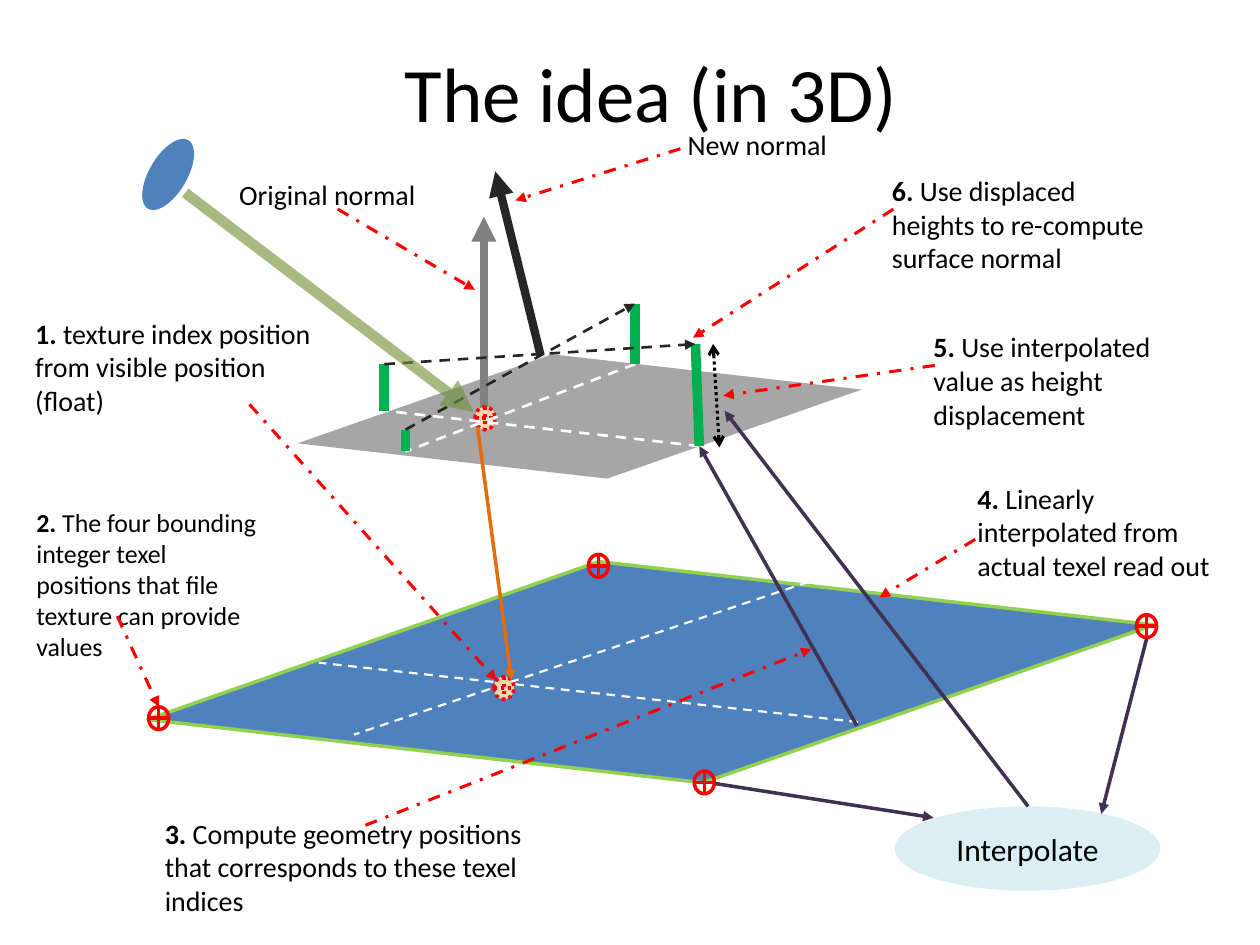
from dataclasses import dataclass

from lxml import etree
from pptx import Presentation
from pptx.dml.color import RGBColor
from pptx.enum.dml import MSO_LINE_DASH_STYLE as DASH
from pptx.enum.shapes import MSO_CONNECTOR, MSO_SHAPE
from pptx.enum.text import MSO_ANCHOR, PP_ALIGN
from pptx.oxml.ns import qn
from pptx.util import Pt


@dataclass(frozen=True)
class Theme:
    font: str = "Calibri"
    title: float = 44
    node: float = 18
    body: float = 16
    small: float = 14.8
    text: str = "000000"
    white: str = "FFFFFF"
    surface: str = "A6A6A6"
    old_normal: str = "808080"
    new_normal: str = "262626"
    texture: str = "4F81BD"
    texture_edge: str = "92D050"
    height: str = "00B050"
    ray: str = "77933C"
    callout: str = "FF0000"
    sample: str = "FCD5B5"
    lookup: str = "E46C0A"
    flow: str = "403152"
    node_fill: str = "DBEEF4"


@dataclass(frozen=True)
class Box:
    left: float
    top: float
    width: float
    height: float

    def inner(self, x, y, width, height):
        return Box(self.left + x, self.top + y, width, height)

    def centred(self, x, y, width, height):
        return self.inner(x - width / 2, y - height / 2, width, height)

    def emu(self):
        return Pt(self.left), Pt(self.top), Pt(self.width), Pt(self.height)


T = Theme()


def add_line(s, box, start, end, color, width, dash=None, head=None, tail=None, alpha=None):
    (x1, y1), (x2, y2) = start, end
    c = s.shapes.add_connector(
        MSO_CONNECTOR.STRAIGHT,
        Pt(box.left + x1), Pt(box.top + y1), Pt(box.left + x2), Pt(box.top + y2),
    )
    c.line.color.rgb = RGBColor.from_string(color)
    c.line.width = Pt(width)
    if dash:
        c.line.dash_style = dash
    ln = c.line._get_or_add_ln()
    if alpha:
        etree.SubElement(ln.find(".//" + qn("a:srgbClr")), qn("a:alpha"), val=str(alpha * 1000))
    for tag, kind in (("a:headEnd", head), ("a:tailEnd", tail)):
        if kind:
            etree.SubElement(ln, qn(tag), type=kind)
    etree.SubElement(c._element.spPr, qn("a:effectLst"))


def add_callout(s, box, start, end):
    add_line(s, box, start, end, T.callout, 1.75, DASH.DASH_DOT, tail="triangle")


def add_shape(s, kind, box, fill=None, line=None, width=2, dash=None, rotation=0):
    sp = s.shapes.add_shape(kind, *box.emu())
    sp.shadow.inherit = False
    sp.rotation = rotation
    if fill:
        sp.fill.solid()
        sp.fill.fore_color.rgb = RGBColor.from_string(fill)
    else:
        sp.fill.background()
    if line:
        sp.line.color.rgb = RGBColor.from_string(line)
        sp.line.width = Pt(width)
        if dash:
            sp.line.dash_style = dash
    else:
        sp.line.fill.background()
    return sp


def add_plane(s, box, fill, line=None):
    sp = add_shape(s, MSO_SHAPE.PARALLELOGRAM, box, fill, line, rotation=6.5)
    sp.adjustments[0] = 2.07


def add_marker(s, box, x, y, fill=None, dash=None):
    add_shape(s, MSO_SHAPE.FLOWCHART_OR, box.centred(x, y, 11.5, 13), fill, T.callout, 2, dash)


def write(sp, runs, size, align=PP_ALIGN.LEFT, anchor=MSO_ANCHOR.TOP):
    tf = sp.text_frame
    tf.word_wrap = True
    tf.vertical_anchor = anchor
    p = tf.paragraphs[0]
    p.alignment = align
    for text, bold in runs:
        r = p.add_run()
        r.text = text
        r.font.name = T.font
        r.font.size = Pt(size)
        r.font.bold = bold
        r.font.color.rgb = RGBColor.from_string(T.text)


def add_text(s, box, runs, size, **layout):
    write(s.shapes.add_textbox(*box.emu()), runs, size, **layout)


def draw_title(s, box):
    add_text(s, box, [("The idea (in 3D)", False)], T.title,
             align=PP_ALIGN.CENTER, anchor=MSO_ANCHOR.MIDDLE)


def draw_surface(s, box):
    add_plane(s, box.inner(100.8, 138.5, 316.8, 67), T.surface)
    add_line(s, box, (204.5, 171.6), (204.5, 57.8), T.old_normal, 4.75, tail="triangle")
    add_marker(s, box, 205.2, 173, T.sample, DASH.ROUND_DOT)

    front, left, back, right = (159.8, 192), (147.6, 168.7), (290.9, 142.1), (327.6, 188.9)
    front_top, left_top, back_top, right_top = (
        (159.8, 179.5), (147.6, 142.1), (290.9, 107.5), (325.4, 130.6))
    for start, end in ((back, front), (right, left)):
        add_line(s, box, start, end, T.white, 1.5, DASH.DASH)
    for top, base in ((front_top, front), (left_top, left), (back_top, back), (right_top, right)):
        add_line(s, box, top, base, T.height, 5.5)
    for start, end in ((front_top, back_top), (left_top, right_top)):
        add_line(s, box, start, end, T.new_normal, 1.5, DASH.DASH, tail="triangle")
    add_line(s, box, (236.9, 137), (211, 31.9), T.new_normal, 4.75, tail="triangle")

    add_shape(s, MSO_SHAPE.OVAL, box.centred(24.1, 33.7, 21.6, 45.4), T.texture, rotation=30.5)
    add_line(s, box, (33.8, 44.2), (198.7, 169.4), T.ray, 6, tail="triangle", alpha=63)
    add_text(s, box.inner(313.9, 3.1, 159.8, 49), [("New normal", False)], T.body)
    add_callout(s, box, (316.8, 19), (222.5, 48.5))
    add_text(s, box.inner(57.6, 31.9, 164.9, 31), [("Original normal", False)], T.body)
    add_callout(s, box, (121, 53.5), (199.4, 99.6))
    add_line(s, box, (335.5, 130.6), (339.1, 189.6), T.text, 1.75, DASH.ROUND_DOT,
             head="arrow", tail="arrow")


def draw_texture(s, box):
    add_plane(s, box.inner(5.3, 8.7, 565.2, 118.8), T.texture, T.texture_edge)
    for start, end in (((386.2, 13.8), (118.3, 103.8)), ((406.3, 96.6), (98.2, 62.7))):
        add_line(s, box, start, end, T.white, 1.25, DASH.DASH)
    for x, y in ((6.7, 94.4), (258, 7.3), (318.5, 131.1), (571.2, 41.8)):
        add_marker(s, box, x, y)
    add_marker(s, box, 204, 77.1, T.sample, DASH.ROUND_DOT)


def draw_steps(s, box):
    steps = [
        ("texture index position from visible position (float)", T.body,
         (13, 177.1, 172.1, 80.6), (142.6, 231.1), (283.7, 388.8)),
        ("The four bounding integer texel positions that file texture can provide values", T.small,
         (13.7, 285.8, 142.6, 82), (67, 352.1), (90.7, 403.9)),
        ("Compute geometry positions that corresponds to these texel indices", T.body,
         (87.1, 463, 220.3, 67.7), (208.8, 471.6), (463.7, 370.8)),
        ("Linearly interpolated from actual texel read out", T.body,
         (551.5, 271.4, 161.3, 84.2), (557.3, 308.2), (502.6, 341.3)),
        ("Use interpolated value as height displacement", T.body,
         (526.3, 185, 161.3, 84.2), (534.2, 208.8), (413.3, 226.1)),
        ("Use displaced heights to re-compute surface normal", T.body,
         (502.6, 95.8, 161.3, 84.2), (510.5, 119.5), (396, 193)),
    ]
    for number, (text, size, place, start, end) in enumerate(steps, 1):
        add_text(s, box.inner(*place), [(f"{number}. ", True), (text, False)], size)
        add_callout(s, box, start, end)


def draw_flow(s, box):
    add_line(s, box, (272.9, 244.1), (292.3, 388.8), T.lookup, 2, tail="triangle")
    node = add_shape(s, MSO_SHAPE.OVAL, box.inner(511.2, 460.8, 151.9, 48.2), T.node_fill)
    write(node, [("Interpolate", False)], T.node, PP_ALIGN.CENTER, MSO_ANCHOR.MIDDLE)
    for start, end in (
        ((409, 447.8), (533.5, 467.3)),
        ((655.2, 365), (629.3, 465.1)),
        ((489.6, 414.7), (399.6, 254.9)),
        ((587.5, 460.8), (414, 234.7)),
    ):
        add_line(s, box, start, end, T.flow, 2, tail="triangle")


def main():
    prs = Presentation()
    prs.slide_width, prs.slide_height = Pt(720), Pt(540)
    s = prs.slides.add_slide(prs.slide_layouts[6])
    page = Box(0, 0, 720, 540)
    draw_surface(s, page.inner(72, 66, 476, 210))
    draw_title(s, page.inner(48.2, 7.2, 648, 90))
    draw_texture(s, page.inner(84, 316, 578, 138))
    draw_steps(s, page)
    draw_flow(s, page)
    prs.save("out.pptx")


if __name__ == "__main__":
    main()
